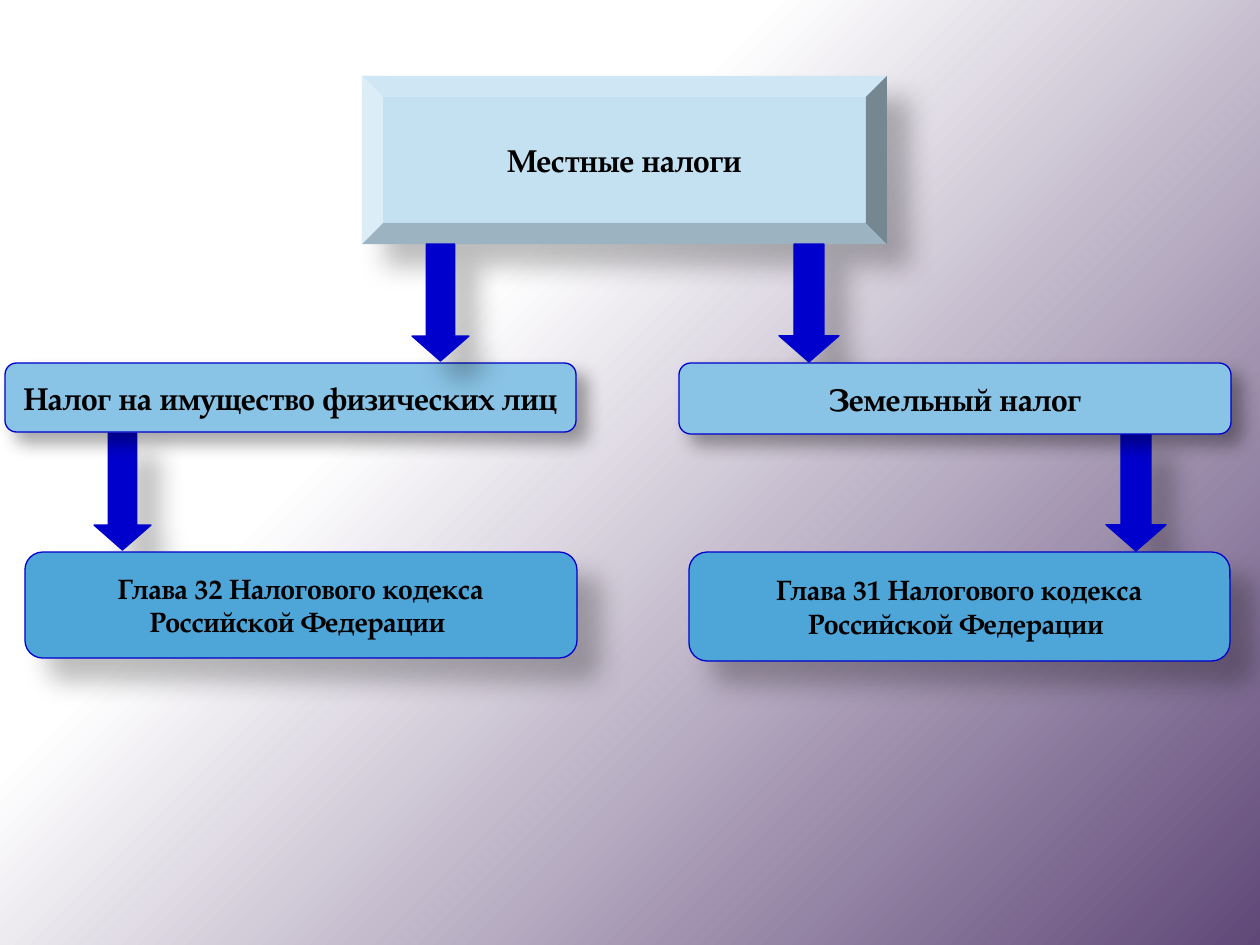
from lxml import etree
from pptx import Presentation
from pptx.dml.color import RGBColor
from pptx.enum.shapes import MSO_SHAPE
from pptx.enum.text import MSO_ANCHOR, PP_ALIGN
from pptx.oxml.ns import qn
from pptx.util import Pt

EMU_PER_PX = 914400 / 126
ARROW, BEVEL, ROUNDED = MSO_SHAPE.DOWN_ARROW, MSO_SHAPE.BEVEL, MSO_SHAPE.ROUNDED_RECTANGLE
CENTER, MIDDLE = PP_ALIGN.CENTER, MSO_ANCHOR.MIDDLE
FONT = "TeX Gyre Pagella"
BLACK, WHITE, PURPLE = "000000", "FFFFFF", "604878"
BLUE, PALE, LIGHT, MEDIUM = "0000CC", "C4E1F2", "89C3E5", "4EA5D8"
DEEP_SHADOW = (26, 15, 18)
SOFT_SHADOW = (35, 10.2, 8)


def px(length):
    return round(length * EMU_PER_PX)


def color(value):
    return RGBColor.from_string(value)


class TaxSlide:
    """Draws the boxes and arrows of the tax scheme on one slide."""

    def __init__(self, presentation):
        self.slide = presentation.slides.add_slide(presentation.slide_layouts[6])

    def background(self, start, end):
        fill = self.slide.background.fill
        fill.gradient()
        fill.gradient_angle = 315
        for stop, (position, value) in zip(fill.gradient_stops, (start, end)):
            stop.position = position
            stop.color.rgb = color(value)

    def shape(self, kind, bounds, fill, line=BLUE, shadow=DEEP_SHADOW):
        shape = self.slide.shapes.add_shape(kind, *map(px, bounds))
        shape.fill.solid()
        shape.fill.fore_color.rgb = color(fill)
        if line:
            shape.line.color.rgb = color(line)
            shape.line.width = Pt(0.75)
        else:
            shape.line.fill.background()
        self.shadow(shape, *shadow)
        return shape

    def shadow(self, shape, opacity, blur, distance):
        shape.shadow.inherit = False
        effects = shape._element.spPr.find(qn("a:effectLst"))
        outer = etree.SubElement(effects, qn("a:outerShdw"), blurRad=str(Pt(blur)),
                                 dist=str(Pt(distance)), dir="2700000",
                                 algn="tl", rotWithShape="0")
        tint = etree.SubElement(outer, qn("a:srgbClr"), val=BLACK)
        etree.SubElement(tint, qn("a:alpha"), val=str(opacity * 1000))

    def arrow(self, *bounds):
        arrow = self.shape(ARROW, bounds, BLUE)
        arrow.adjustments[1] = 0.437

    def box(self, text, bounds, fill, size=18, kind=ROUNDED, **style):
        frame = self.shape(kind, bounds, fill, **style).text_frame
        frame.word_wrap = True
        frame.vertical_anchor = MIDDLE
        paragraph = frame.paragraphs[0]
        paragraph.text = text
        paragraph.alignment = CENTER
        font = paragraph.font
        font.name, font.size, font.bold = FONT, Pt(size), True
        font.color.rgb = color(BLACK)

    def tax(self, text, bounds):
        self.box(text, bounds, LIGHT, shadow=SOFT_SHADOW)

    def chapter(self, number, bounds):
        text = f"Глава {number} Налогового кодекса Российской Федерации "
        self.box(text, bounds, MEDIUM, size=16)


def main():
    presentation = Presentation()
    presentation.slide_width, presentation.slide_height = px(1260), px(945)
    scheme = TaxSlide(presentation)
    scheme.background((0.35, WHITE), (1, PURPLE))
    scheme.arrow(94, 433, 57, 117)
    scheme.tax("Налог на имущество физических лиц", (5, 363, 571, 69))
    scheme.arrow(1106, 433, 60, 118)
    scheme.chapter(32, (25, 552, 552, 106))
    scheme.chapter(31, (689, 552, 541, 109))
    scheme.box("Местные налоги", (362, 76, 525, 168), PALE, kind=BEVEL, line=None)
    scheme.arrow(412, 244, 57, 117)
    scheme.arrow(779, 244, 60, 118)
    scheme.tax("Земельный налог", (679, 363, 552, 71))
    presentation.save("out.pptx")


if __name__ == "__main__":
    main()
